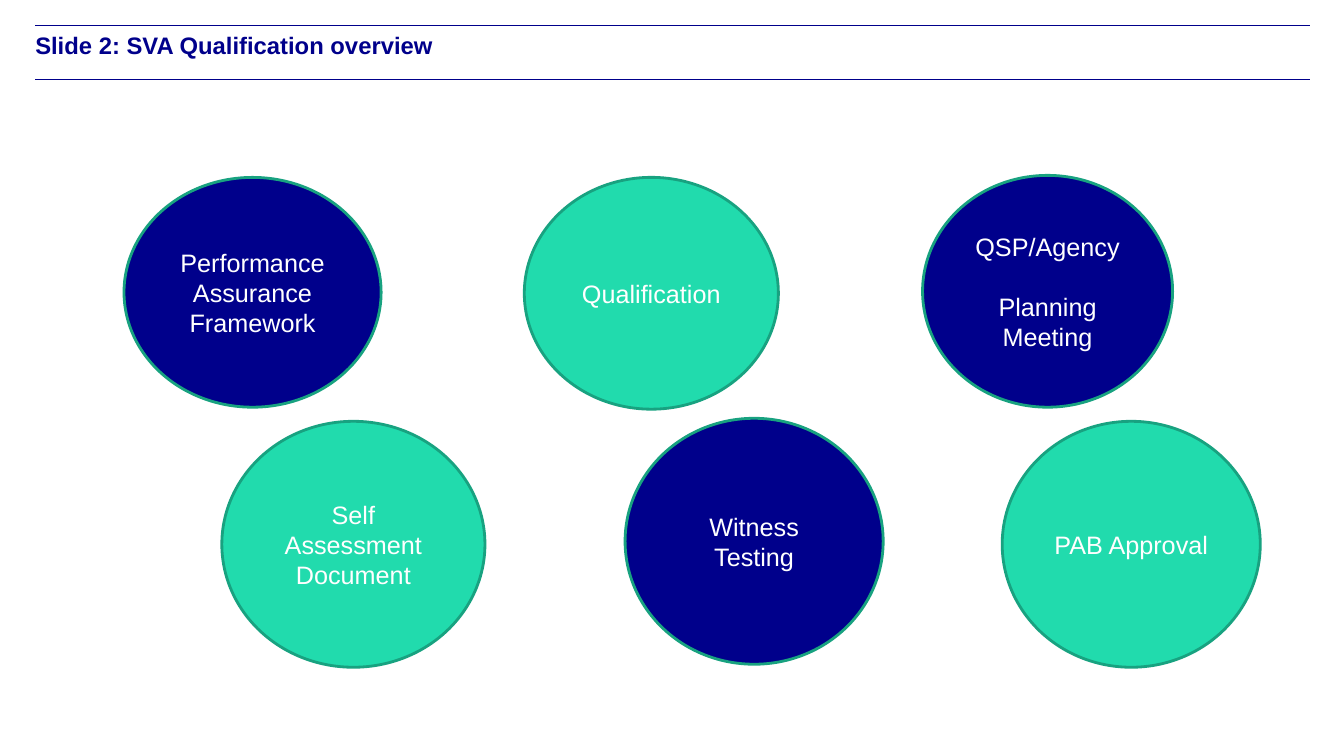
from dataclasses import dataclass

from lxml import etree
from pptx import Presentation
from pptx import util as u
from pptx.dml.color import RGBColor
from pptx.enum import shapes, text
from pptx.oxml.ns import qn


@dataclass(frozen=True)
class Theme:
    font: str = "Arial"
    navy: RGBColor = RGBColor(0x00, 0x00, 0x8B)
    mint: RGBColor = RGBColor(0x21, 0xDB, 0xAD)
    edge: RGBColor = RGBColor(0x18, 0xA2, 0x80)
    white: RGBColor = RGBColor(0xFF, 0xFF, 0xFF)
    head: int = 17
    body: int = 18
    gap: int = 21


class Deck:
    def __init__(self, theme):
        self.theme = theme
        self.prs = Presentation()
        self.prs.slide_width = u.Inches(13.33)
        self.prs.slide_height = u.Inches(7.5)
        self.slide = self.prs.slides.add_slide(self.prs.slide_layouts[5])

    def style(self, para, size, color, bold=False):
        for run in para.runs:
            font = run.font
            font.name, font.size, font.bold = self.theme.font, u.Pt(size), bold
            font.color.rgb = color

    def title(self, words, left, top, width, height):
        box = self.slide.shapes.title
        box.left, box.top = u.Inches(left), u.Inches(top)
        box.width, box.height = u.Inches(width), u.Inches(height)
        frame = box.text_frame
        frame.margin_left = frame.margin_right = 0
        frame.margin_top = frame.margin_bottom = 0
        frame.vertical_anchor = text.MSO_ANCHOR.TOP
        frame.word_wrap = True
        frame.auto_size = text.MSO_AUTO_SIZE.NONE
        frame.text = words
        para = frame.paragraphs[0]
        para.alignment = text.PP_ALIGN.LEFT
        self.style(para, self.theme.head, self.theme.navy, bold=True)

    def rule(self, left, top, width):
        line = self.slide.shapes.add_connector(
            shapes.MSO_CONNECTOR.STRAIGHT, u.Inches(left), u.Inches(top),
            u.Inches(left + width), u.Inches(top))
        line.line.color.rgb = self.theme.navy
        line.line.width = u.Pt(0.5)
        etree.SubElement(line._element.spPr, qn("a:effectLst"))

    def disc(self, words, fill, left, top, width, height):
        """Draw an ellipse; each line of words is a spaced paragraph."""
        disc = self.slide.shapes.add_shape(
            shapes.MSO_SHAPE.OVAL, u.Inches(left), u.Inches(top),
            u.Inches(width), u.Inches(height))
        disc.shadow.inherit = False
        disc.fill.solid()
        disc.fill.fore_color.rgb = fill
        disc.line.color.rgb = self.theme.edge
        disc.line.width = u.Pt(2)
        frame = disc.text_frame
        frame.word_wrap = True
        frame.vertical_anchor = text.MSO_ANCHOR.MIDDLE
        frame.text = words
        for i, para in enumerate(frame.paragraphs):
            para.alignment = text.PP_ALIGN.CENTER
            if i:
                para.space_before = u.Pt(self.theme.gap)
            self.style(para, self.theme.body, self.theme.white)


STEPS = [
    ("Performance Assurance Framework", 1.23, 1.76, 2.55, 2.28),
    ("Qualification", 5.2, 1.76, 2.52, 2.3),
    ("QSP/Agency\nPlanning Meeting", 9.15, 1.74, 2.48, 2.3),
    ("Self Assessment Document", 2.2, 4.18, 2.61, 2.44),
    ("Witness Testing", 6.2, 4.15, 2.56, 2.44),
    ("PAB Approval", 9.94, 4.18, 2.56, 2.44),
]


def main():
    theme = Theme()
    deck = Deck(theme)
    left, width = 0.35, 12.64
    for top in (0.25, 0.79):
        deck.rule(left, top, width)
    deck.title("Slide 2: SVA Qualification overview", left, 0.3, width, 0.49)
    for i, (words, *place) in enumerate(STEPS):
        deck.disc(words, theme.mint if i % 2 else theme.navy, *place)
    deck.prs.save("out.pptx")


if __name__ == "__main__":
    main()
